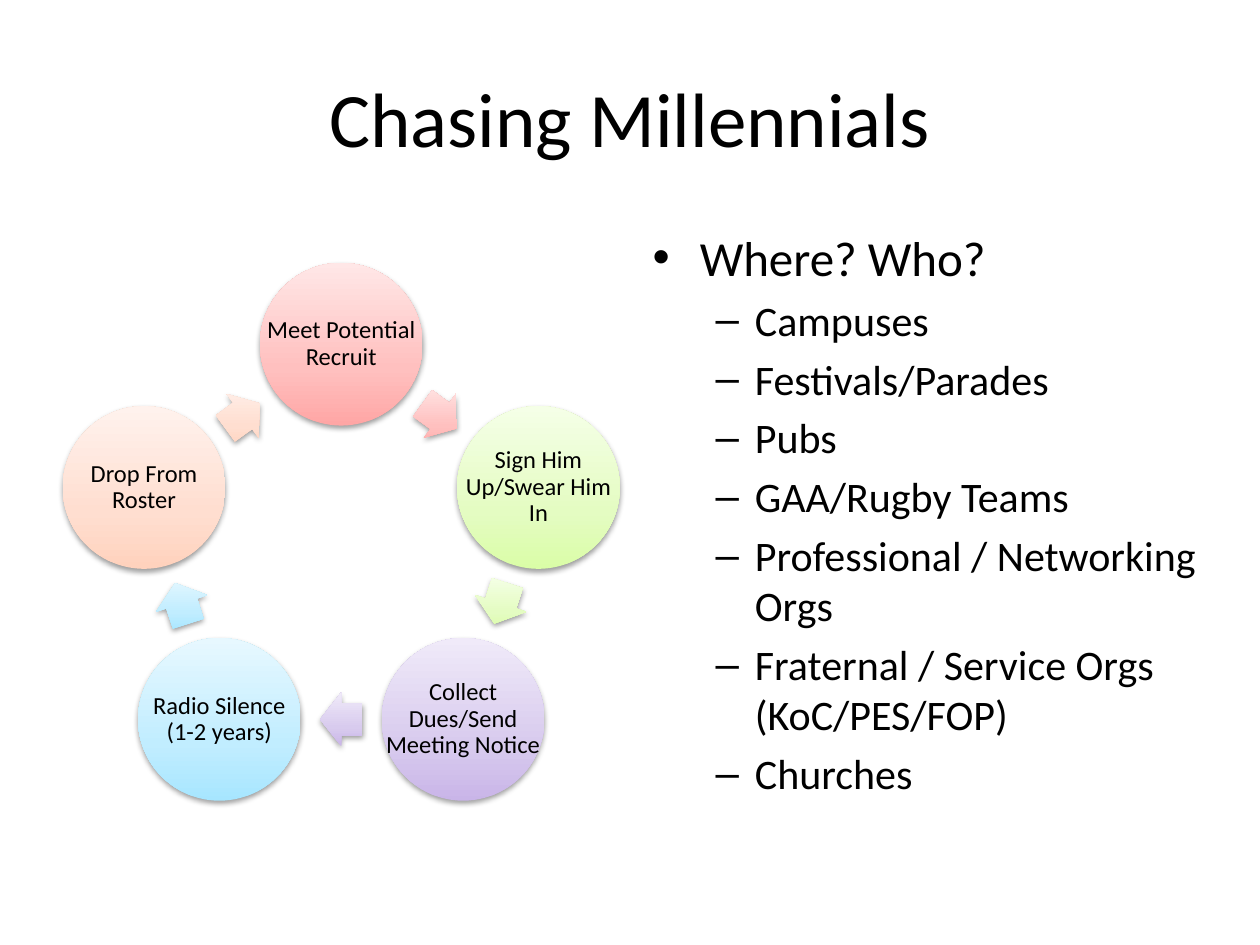
import copy
import math

import pptx
import pptx.dml.color
import pptx.enum.shapes
import pptx.enum.text
import pptx.oxml
import pptx.oxml.ns
import pptx.util

Cm = pptx.util.Cm
Pt = pptx.util.Pt
PRESET = pptx.enum.shapes.MSO_SHAPE
MIDDLE = pptx.enum.text.MSO_ANCHOR.MIDDLE
CENTER = pptx.enum.text.PP_ALIGN.CENTER


def color(hex_value):
    return pptx.dml.color.RGBColor.from_string(hex_value)


def apply(target, formats):
    for name, value in formats.items():
        setattr(target, name, value)


presentation = pptx.Presentation()
apply(presentation, {"slide_width": Cm(25.4), "slide_height": Cm(19.05)})
slide = presentation.slides.add_slide(presentation.slide_layouts[1])

heading = slide.shapes.title
apply(heading, {"left": Cm(1.27), "top": Cm(0.76), "width": Cm(22.86), "height": Cm(3.18)})
heading.text_frame.text = "Chasing Millennials"
heading.text_frame.vertical_anchor = MIDDLE
heading.text_frame.paragraphs[0].alignment = CENTER
apply(heading.text_frame.paragraphs[0].font, {"size": Pt(44), "name": "Calibri"})
heading.text_frame.paragraphs[0].font.color.rgb = color("000000")

cycle = slide.shapes.add_group_shape().shapes
center_x, center_y, ring_radius = 6.88, 11.12, 4.18
circle_size, arrow_width, arrow_height = 3.28, 0.86, 1.09
arrow_radius = ring_radius * math.cos(math.radians(36))
label_box = {
    "word_wrap": True, "vertical_anchor": MIDDLE,
    "margin_left": Cm(0.05), "margin_right": Cm(0.05),
    "margin_top": Cm(0.05), "margin_bottom": Cm(0.05),
}
stages = [
    ("Meet Potential Recruit", ("FFA6A5", "FFC0BF", "FFE7E7")),
    ("Sign Him Up/Swear Him In", ("DAFDA7", "E4FCC2", "F5FFE7")),
    ("Collect Dues/Send Meeting Notice", ("C9B5E8", "D8CBEE", "F0EAF9")),
    ("Radio Silence (1-2 years)", ("A7E6FF", "C1EDFF", "E7F8FF")),
    ("Drop From Roster", ("FFD2BD", "FFDED0", "FFF2ED")),
]
shadow_xml = (
    f'<a:outerShdw {pptx.oxml.ns.nsdecls("a")} blurRad="40000" dist="20000" dir="5400000" '
    'rotWithShape="0"><a:srgbClr val="000000"><a:alpha val="38000"/></a:srgbClr></a:outerShdw>'
)

for index, (stage, shades) in enumerate(stages):
    circle_angle = index * 72
    arrow_angle = circle_angle + 36
    for preset, angle, radius, width, height in (
        (PRESET.OVAL, circle_angle, ring_radius, circle_size, circle_size),
        (PRESET.RIGHT_ARROW, arrow_angle, arrow_radius, arrow_width, arrow_height),
    ):
        left = center_x + radius * math.sin(math.radians(angle)) - width / 2
        top = center_y - radius * math.cos(math.radians(angle)) - height / 2
        bounds = Cm(left), Cm(top), Cm(width), Cm(height)
        part = cycle.add_shape(preset, *bounds)

        part.fill.gradient()
        part.fill.gradient_angle = 90
        gradient = part.element.spPr.find(pptx.oxml.ns.qn("a:gradFill"))
        gradient.set("rotWithShape", "0")
        stop_list = gradient.find(pptx.oxml.ns.qn("a:gsLst"))
        stop_list.insert(1, copy.deepcopy(stop_list[0]))
        for stop, position, shade in zip(part.fill.gradient_stops, (0, 0.35, 1), shades):
            stop.position = position
            stop.color.rgb = color(shade)
        part.line.fill.background()
        part.shadow.inherit = False
        effects = part.element.spPr.find(pptx.oxml.ns.qn("a:effectLst"))
        effects.append(pptx.oxml.parse_xml(shadow_xml))

        if preset == PRESET.RIGHT_ARROW:
            part.rotation = arrow_angle
            part.adjustments[0] = 0.6
            part.adjustments[1] = 0.5
        else:
            label = cycle.add_textbox(*bounds).text_frame
            apply(label, label_box)
            label.text = stage
            apply(label.paragraphs[0], {"alignment": CENTER, "line_spacing": 0.9})
            apply(label.paragraphs[0].font, {"size": Pt(14), "name": "Calibri"})
            label.paragraphs[0].font.color.rgb = color("000000")

venues = slide.placeholders[1]
apply(venues, {"left": Cm(12.9), "top": Cm(4.45), "width": Cm(11.86), "height": Cm(12.57)})
venues.text_frame.auto_size = pptx.enum.text.MSO_AUTO_SIZE.NONE
venue_lines = [
    "Where? Who?",
    "Campuses",
    "Festivals/Parades",
    "Pubs",
    "GAA/Rugby Teams",
    "Professional / Networking Orgs",
    "Fraternal / Service Orgs (KoC/PES/FOP)",
    "Churches",
]
venues.text_frame.text = "\n".join(venue_lines)
for index, paragraph in enumerate(venues.text_frame.paragraphs):
    paragraph.level = 1 if index else 0
    apply(paragraph.font, {"size": Pt(24 if index else 28), "name": "Calibri"})
    paragraph.font.color.rgb = color("000000")
venues.text_frame.paragraphs[0].space_before = Pt(0)

presentation.save("out.pptx")
